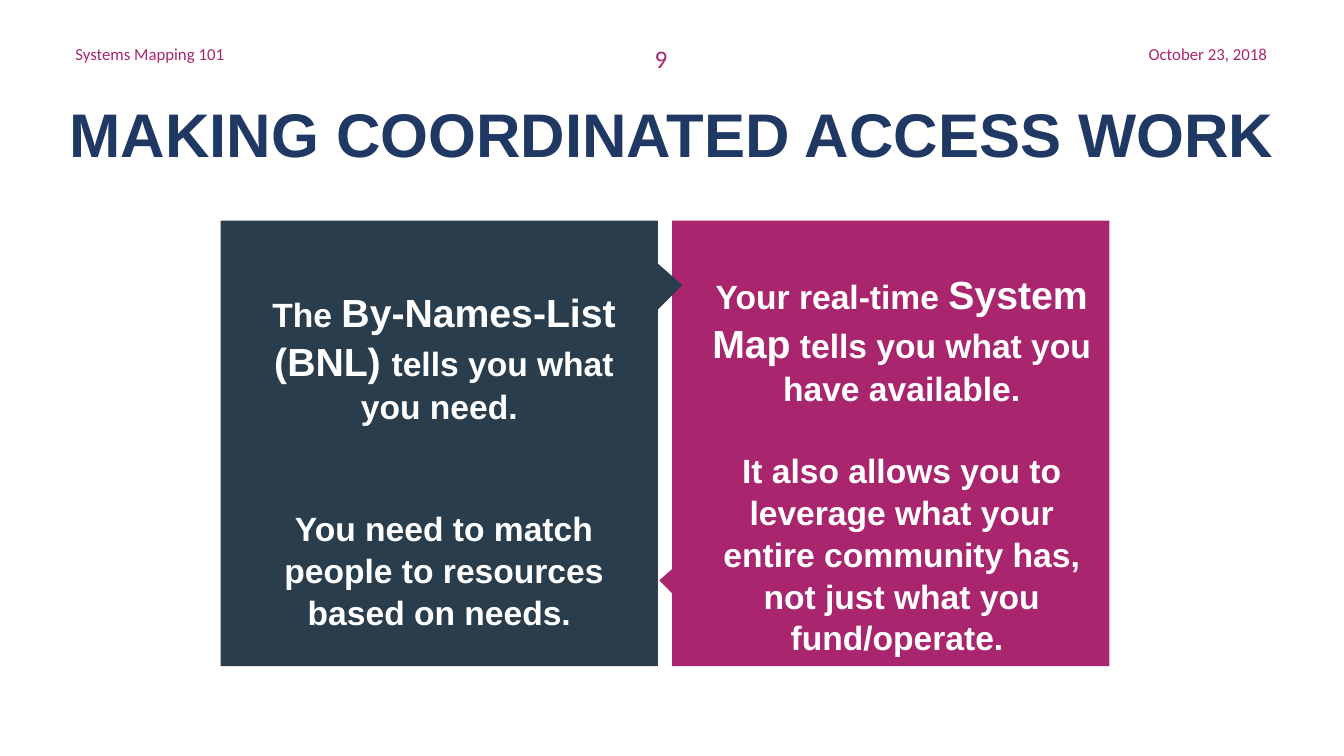
from dataclasses import dataclass

from lxml.etree import SubElement
from pptx import Presentation
from pptx.dml.color import RGBColor
from pptx.enum.shapes import MSO_SHAPE
from pptx.enum.text import MSO_ANCHOR, PP_ALIGN
from pptx.oxml.ns import qn
from pptx.util import Cm, Pt


@dataclass(frozen=True)
class Theme:
    navy: RGBColor = RGBColor(0x20, 0x38, 0x64)
    slate: RGBColor = RGBColor(0x2A, 0x3D, 0x4D)
    magenta: RGBColor = RGBColor(0xA9, 0x26, 0x6F)
    white: RGBColor = RGBColor(0xFF, 0xFF, 0xFF)
    black: RGBColor = RGBColor(0, 0, 0)
    header_font: str = "Calibri"
    body_font: str = "Arial"
    title_size: int = 44
    strong_size: int = 28
    body_size: int = 24
    number_size: int = 18
    header_size: int = 12


@dataclass(frozen=True)
class Box:
    left: float
    top: float
    width: float
    height: float

    def lengths(self):
        return Cm(self.left), Cm(self.top), Cm(self.width), Cm(self.height)


THEME = Theme()


def add_text_frame(shapes, box, anchor=MSO_ANCHOR.TOP):
    frame = shapes.add_textbox(*box.lengths()).text_frame
    frame.word_wrap = True
    frame.vertical_anchor = anchor
    return frame


def style_font(font, name, size, color, bold=False):
    font.name = name
    font.size = Pt(size)
    font.color.rgb = color
    font.bold = bold


def add_filled(shapes, preset, box, color):
    shape = shapes.add_shape(preset, *box.lengths())
    shape.shadow.inherit = False
    shape.fill.solid()
    shape.fill.fore_color.rgb = color
    shape.line.fill.background()
    return shape


def add_header(page, box):
    """Three labels sharing one row: left, centre and right."""
    labels = [
        ("Systems Mapping 101", 0, 7.62, PP_ALIGN.LEFT, THEME.header_size),
        ("October 23, 2018", box.width - 8.13, 8.13, PP_ALIGN.RIGHT, THEME.header_size),
        ("9", 11.2, 7.62, PP_ALIGN.CENTER, THEME.number_size),
    ]
    for text, offset, width, alignment, size in labels:
        label_box = Box(box.left + offset, box.top, width, box.height)
        para = add_text_frame(page.shapes, label_box).paragraphs[0]
        para.text = text
        para.alignment = alignment
        style_font(para.font, THEME.header_font, size, THEME.magenta)


def add_title(page, box):
    para = add_text_frame(page.shapes, box, MSO_ANCHOR.MIDDLE).paragraphs[0]
    para.text = "MAKING COORDINATED ACCESS WORK"
    style_font(para.font, THEME.body_font, THEME.title_size, THEME.navy, True)


def soften(shape):
    """Make a fill 70% opaque and fade its edges."""
    properties = shape._element.spPr
    color = properties.find(qn("a:solidFill"))[0]
    SubElement(color, qn("a:alpha"), val="70000")
    effects = properties.find(qn("a:effectLst"))
    SubElement(effects, qn("a:softEdge"), rad=str(Pt(10)))


def add_pointer(shapes, center_x, center_y, direction, color):
    """A triangle pointing right (1) or left (-1) above its soft shadow."""
    layers = [
        (center_x + 0.25 * direction, 2.26, 1.47, THEME.black),
        (center_x, 1.85, 0.99, color),
    ]
    for x, width, height, fill in layers:
        box = Box(x - width / 2, center_y - height / 2, width, height)
        triangle = add_filled(shapes, MSO_SHAPE.ISOSCELES_TRIANGLE, box, fill)
        triangle.rotation = 88.3 * direction
        if fill == THEME.black:
            soften(triangle)


def add_card(page, box, color, direction, pointer, text_inset, paragraphs, gap):
    """A panel with a pointer on its inner side; pointer is (overhang, drop)."""
    shapes = page.shapes.add_group_shape().shapes
    add_filled(shapes, MSO_SHAPE.RECTANGLE, box, color)

    # Pointer on the side that faces the other card
    overhang, drop = pointer
    edge = box.left + box.width if direction > 0 else box.left
    add_pointer(shapes, edge + overhang, box.top + drop, direction, color)

    # Text
    text_box = Box(box.left + text_inset.left, box.top + text_inset.top,
                   text_inset.width, text_inset.height)
    frame = add_text_frame(shapes, text_box)
    for index, spans in enumerate(paragraphs):
        para = frame.add_paragraph() if index else frame.paragraphs[0]
        para.alignment = PP_ALIGN.CENTER
        para.line_spacing = 1.04
        para.space_before = Pt(gap if index else 0)
        style_font(para.font, THEME.body_font, THEME.body_size, THEME.white, True)
        for text, strong in spans:
            span = para.add_run()
            span.text = text
            if strong:
                span.font.size = Pt(THEME.strong_size)


def add_cards(page, box):
    card_width = 11.02
    right_card = Box(box.left + box.width - card_width, box.top, card_width, box.height)
    left_card = Box(box.left, box.top, card_width, box.height)
    add_card(
        page, right_card, THEME.magenta, -1, (0.17, 9.08),
        Box(0.69, 1.07, 10.19, 9.83),
        [
            [("Your real-time ", False), ("System Map", True),
             (" tells you what you have available.", False)],
            [("It also allows you to leverage what your entire community has, "
              "not just what you fund/operate. ", False)],
        ],
        gap=28.8,
    )
    add_card(
        page, left_card, THEME.slate, 1, (0.12, 1.64),
        Box(0.64, 1.53, 9.98, 8.81),
        [
            [("The ", False), ("By-Names-List (BNL) ", True),
             ("tells you what you need. ", False)],
            [("You need to match people to resources based on needs. ", False)],
        ],
        gap=57.6,
    )


def main():
    deck = Presentation()
    deck.slide_width, deck.slide_height = Cm(33.87), Cm(19.05)
    page = deck.slides.add_slide(deck.slide_layouts[6])
    add_header(page, Box(1.65, 0.97, 30.53, 1.02))
    add_title(page, Box(1.5, 1.75, 32.3, 3.18))
    add_cards(page, Box(5.56, 5.56, 22.4, 11.23))
    deck.save("out.pptx")


if __name__ == "__main__":
    main()
